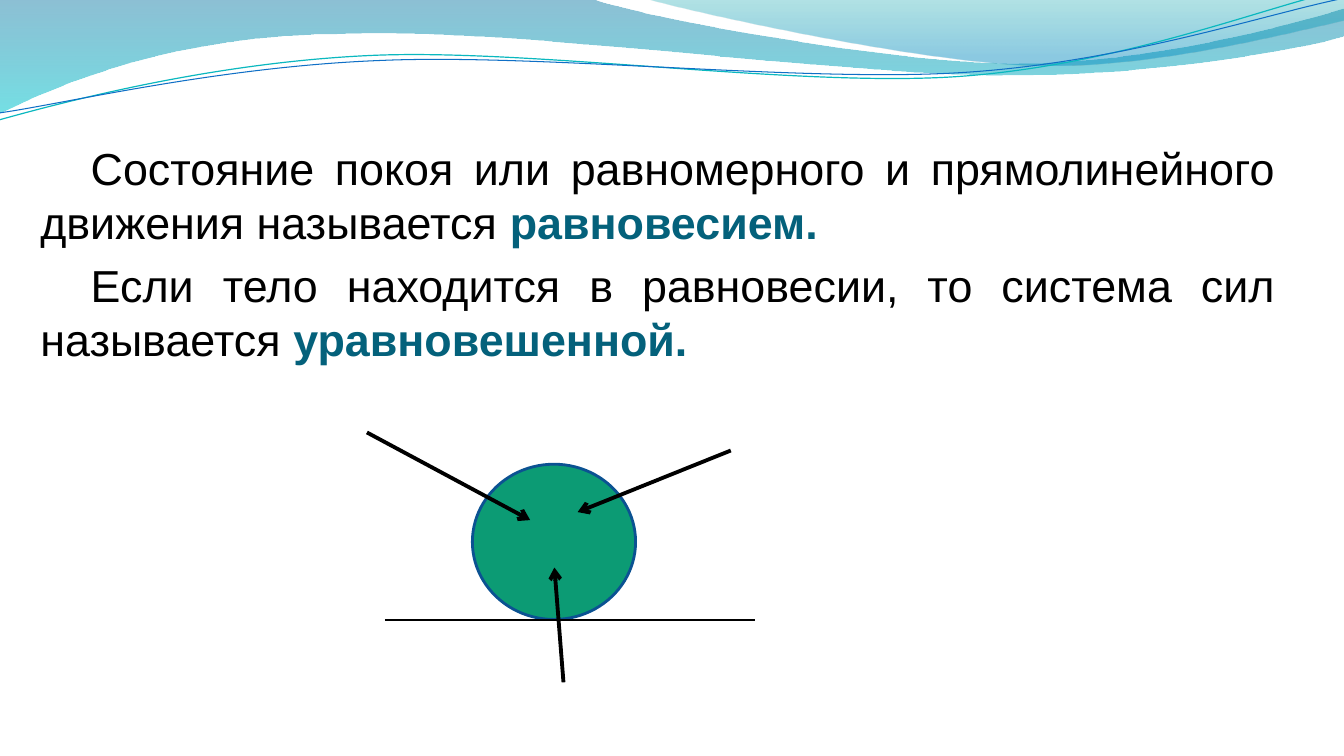
"""Build the slide that defines equilibrium and a balanced system of forces."""
import math

import pptx
import pptx.dml.color
import pptx.enum.shapes
import pptx.enum.text
import pptx.oxml.ns
import pptx.util
from lxml import etree

Pt = pptx.util.Pt
RGBColor = pptx.dml.color.RGBColor
qn = pptx.oxml.ns.qn

BLACK = RGBColor(0x00, 0x00, 0x00)
TERM = RGBColor(0x04, 0x61, 0x7B)
BALL_FILL = RGBColor(0x0C, 0x9B, 0x74)
BALL_EDGE = RGBColor(0x0B, 0x52, 0x92)
DEEP_BLUE = RGBColor(0x00, 0x74, 0xA1)
TURQUOISE = RGBColor(0x00, 0xC6, 0xCF)
SEA_GREEN = RGBColor(0x00, 0xA1, 0xA9)
SKY_BLUE = RGBColor(0x00, 0x8B, 0xBF)
AQUA_LINE = RGBColor(0x0A, 0xB8, 0xBF)
BLUE_LINE = RGBColor(0x0F, 0x6F, 0xC6)

DEFINITIONS = [
    ("Состояние покоя или равномерного и прямолинейного движения называется ",
     "равновесием."),
    ("Если тело находится в равновесии, то система сил называется ",
     "уравновешенной."),
]
DEFINITIONS_BOX = {"left": Pt(0), "top": Pt(97.2),
                   "width": Pt(918.7), "height": Pt(172.8)}
FRAME_FORMAT = {
    "word_wrap": True,
    "auto_size": pptx.enum.text.MSO_AUTO_SIZE.NONE,
    "vertical_anchor": pptx.enum.text.MSO_ANCHOR.TOP,
}
PARAGRAPH_FORMAT = {
    "alignment": pptx.enum.text.PP_ALIGN.JUSTIFY,
    "space_before": Pt(6.4),
}
INDENTS = {"marL": Pt(21.6), "indent": Pt(36)}

BALL_BOX = (337.4, 331.6, 116.6, 110.9)
FORCES = [
    ((262.1, 308.9), (378.7, 371.5)),
    ((522, 321.8), (412.6, 365.8)),
    ((402.5, 487.4), (396, 405.4)),
]
GROUND = ((275, 442.8), (539.6, 442.8))

BANDS = [
    {"start": (0, -0.7),
     "steps": [
         [(422.6, -0.7)],
         [(456.5, 12.2), (637.2, 45.4), (727.9, 45.4)],
         [(819.4, 45.4), (920.2, 18.7), (959.8, 6.5)],
         [(961.2, 25.9)],
         [(943.9, 31.7), (835.2, 54.7), (715.7, 54)],
         [(596.9, 54), (366.5, 20.2), (247, 24.5)],
         [(123.8, 25.2), (43.9, 59.8), (-0.7, 81.4)]],
     "stops": [(0, DEEP_BLUE, 45), (1, TURQUOISE, 55)]},
    {"start": (460.1, -0.7),
     "steps": [
         [(488.9, 7.9), (654.5, 44.6), (738, 46.8)],
         [(821.5, 49.7), (923, 23), (959.8, 15.1)],
         [(959.8, 0)]],
     "stops": [(0, SEA_GREEN, 30), (0.8, SKY_BLUE, 45)]},
]
STRAND_TILT = 357.3
STRANDS = [
    {"start": (-0.7, 85.7),
     "steps": [
         [(46.1, 72.7), (151.9, 44.6), (265.7, 39.6)],
         [(379.4, 34.6), (568.8, 62.6), (684, 54.7)],
         [(799.2, 46.8), (901.4, 5.8), (958.3, -7.2)]],
     "center": (478.8, 41.4), "color": AQUA_LINE, "width": 0.85},
    {"start": (0, 80.6),
     "steps": [
         [(45.4, 74.2), (157, 47.5), (272.2, 43.2)],
         [(386.6, 38.2), (573.1, 59), (687.6, 51.8)],
         [(802.8, 44.6), (903.6, 10.1), (960.5, -1.4)]],
     "center": (480.2, 42.5), "color": BLUE_LINE, "width": 0.75},
]


def apply(target, formats):
    for name, value in formats.items():
        setattr(target, name, value)


def level(point, center):
    angle = math.radians(-STRAND_TILT)
    dx, dy = point[0] - center[0], point[1] - center[1]
    return (center[0] + dx * math.cos(angle) - dy * math.sin(angle),
            center[1] + dx * math.sin(angle) + dy * math.cos(angle))


def add_outline(shapes, start, steps, close):
    builder = shapes.build_freeform(Pt(start[0]), Pt(start[1]))
    builder.add_line_segments(
        [(Pt(x), Pt(y)) for step in steps for x, y in step], close=close)
    outline = builder.convert_to_shape()
    outline.shadow.inherit = False
    sides = iter(list(outline._element.iter(qn("a:lnTo"))))
    for step in steps:
        parts = [next(sides) for _ in step]
        if len(parts) == 3:
            curve = etree.Element(qn("a:cubicBezTo"))
            parts[0].addprevious(curve)
            for part in parts:
                curve.append(part[0])
                part.getparent().remove(part)
    return outline


def add_band(shapes, start, steps, stops):
    band = add_outline(shapes, start, steps, True)
    band.line.fill.background()
    band.fill.gradient()
    band.fill.gradient_angle = 270
    for stop, (position, color, _) in zip(band.fill.gradient_stops, stops):
        stop.position = position
        stop.color.rgb = color
    tints = band._element.spPr.iter(qn("a:srgbClr"))
    for tint, (_, _, opacity) in zip(tints, stops):
        etree.SubElement(tint, qn("a:alpha"), val=str(opacity * 1000))


def add_strand(shapes, start, steps, center, color, width):
    leveled = [[level(point, center) for point in step] for step in steps]
    strand = add_outline(shapes, level(start, center), leveled, False)
    strand.rotation = STRAND_TILT
    strand.fill.background()
    strand.line.color.rgb = color
    strand.line.width = Pt(width)


def add_line(shapes, ends, width, arrow):
    line = shapes.add_connector(pptx.enum.shapes.MSO_CONNECTOR.STRAIGHT,
                                *[Pt(v) for point in ends for v in point])
    line.line.color.rgb = BLACK
    line.line.width = Pt(width)
    if arrow:
        etree.SubElement(line.line._get_or_add_ln(), qn("a:tailEnd"), type="arrow")
    etree.SubElement(line._element.spPr, qn("a:effectLst"))


def fill_definitions(body):
    apply(body, DEFINITIONS_BOX)
    frame = body.text_frame
    apply(frame, FRAME_FORMAT)
    for index, (statement, term) in enumerate(DEFINITIONS):
        paragraph = frame.add_paragraph() if index else frame.paragraphs[0]
        apply(paragraph, PARAGRAPH_FORMAT)
        properties = paragraph._p.get_or_add_pPr()
        for name, length in INDENTS.items():
            properties.set(name, str(length))
        etree.SubElement(properties, qn("a:buNone"))
        for text, color, bold in ((statement, BLACK, False), (term, TERM, True)):
            run = paragraph.add_run()
            run.text = text
            apply(run.font, {"name": "Arial", "size": Pt(32), "bold": bold})
            run.font.color.rgb = color


def main():
    deck = pptx.Presentation()
    apply(deck, {"slide_width": Pt(960), "slide_height": Pt(540)})
    slide = deck.slides.add_slide(deck.slide_layouts[1])
    shapes = slide.shapes
    title = shapes.title._element
    title.getparent().remove(title)
    for band in BANDS:
        add_band(shapes, **band)
    for strand in STRANDS:
        add_strand(shapes, **strand)
    fill_definitions(slide.placeholders[1])
    ball = shapes.add_shape(pptx.enum.shapes.MSO_SHAPE.OVAL, *map(Pt, BALL_BOX))
    ball.shadow.inherit = False
    ball.fill.solid()
    ball.fill.fore_color.rgb = BALL_FILL
    ball.line.color.rgb = BALL_EDGE
    ball.line.width = Pt(2)
    for force in FORCES:
        add_line(shapes, force, 2.75, True)
    add_line(shapes, GROUND, 2, False)
    deck.save("out.pptx")


if __name__ == "__main__":
    main()
